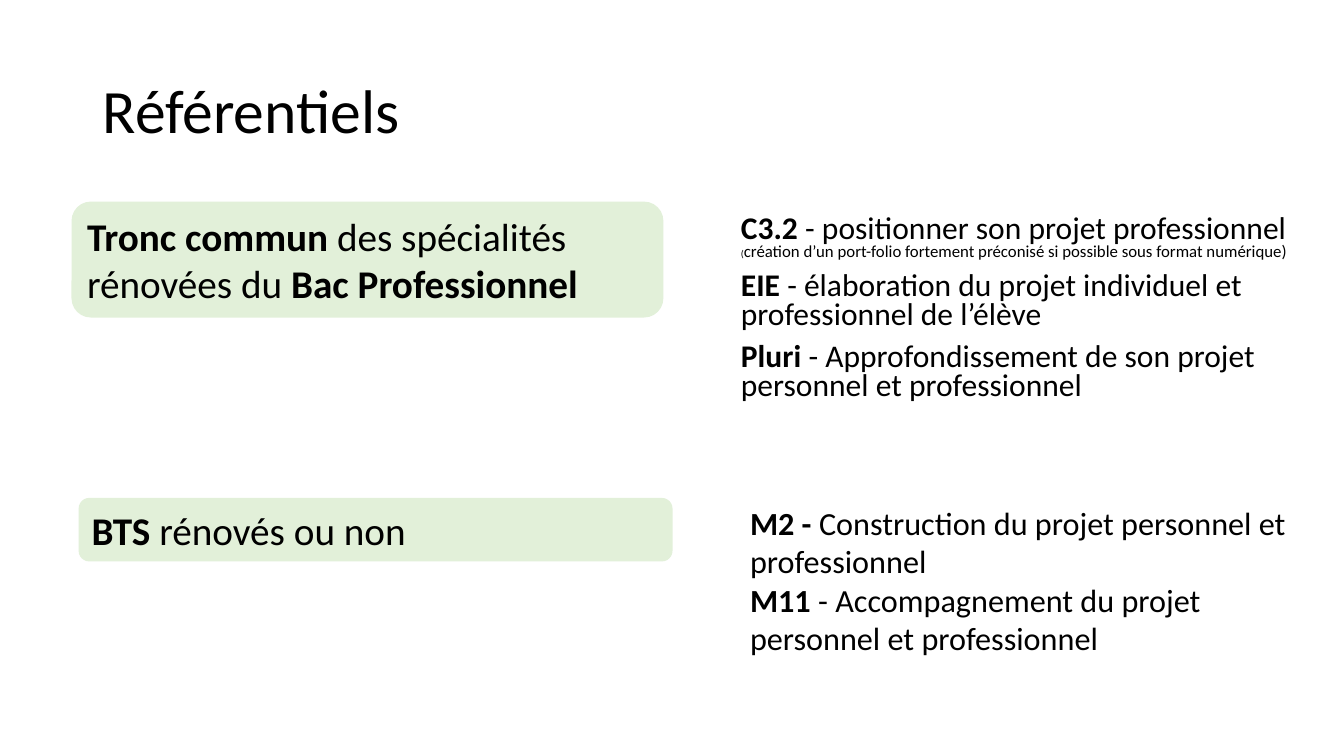
from dataclasses import dataclass

from pptx import Presentation
from pptx.dml.color import RGBColor
from pptx.enum.shapes import MSO_SHAPE
from pptx.enum.text import MSO_ANCHOR, MSO_AUTO_SIZE, PP_ALIGN
from pptx.util import Inches, Pt


@dataclass(frozen=True)
class Theme:
    font: str = "Calibri"
    ink: RGBColor = RGBColor(0x00, 0x00, 0x00)
    panel: RGBColor = RGBColor(0xE2, 0xF0, 0xD9)
    title: float = 44
    diploma: float = 28
    module: float = 23
    skill: float = 22.5
    note: float = 12
    bracket: float = 7


THEME = Theme()

# Each paragraph is a list of runs: (text, bold) or (text, bold, size).
TITLE = [[("Référentiels", False)]]
DIPLOMAS = [
    ((0.71, 2, 5.87, 1.15),
     [[("Tronc commun ", True), ("des spécialités rénovées du ", False),
       ("Bac Professionnel", True)]]),
    ((0.78, 4.94, 5.89, 0.63),
     [[("BTS ", True), ("rénovés ou non", False)]]),
]
SKILLS = [
    [("C3.2 ", True), ("- positionner son projet professionnel", False),
     (" (", False, THEME.bracket),
     ("création d’un port-folio fortement préconisé si possible sous format numérique)",
      False, THEME.note)],
    [("EIE ", True),
     ("- élaboration du projet individuel et professionnel de l’élève", False)],
    [("Pluri", True),
     (" - Approfondissement de son projet personnel et professionnel", False)],
]
MODULES = [
    [("M2 - ", True), ("Construction du projet personnel et professionnel", False)],
    [("M11 ", True), ("- Accompagnement du projet personnel et professionnel", False)],
]


def write(holder, paragraphs, *, size, line=1.0, gap=0, top=0.05,
          anchor=MSO_ANCHOR.TOP, grow=False):
    """Fill a shape with formatted runs; gap is the space between paragraphs."""
    frame = holder.text_frame
    frame.word_wrap = True
    frame.auto_size = MSO_AUTO_SIZE.SHAPE_TO_FIT_TEXT if grow else MSO_AUTO_SIZE.NONE
    frame.vertical_anchor = anchor
    frame.margin_top = Inches(top)
    for index, runs in enumerate(paragraphs):
        paragraph = frame.add_paragraph() if index else frame.paragraphs[0]
        paragraph.alignment = PP_ALIGN.LEFT
        paragraph.line_spacing = line
        paragraph.space_before = Pt(gap if index else 0)
        for text, bold, *own_size in runs:
            run = paragraph.add_run()
            run.text = text
            run.font.name = THEME.font
            run.font.bold = bold
            run.font.size = Pt(own_size[0] if own_size else size)
            run.font.color.rgb = THEME.ink


def main():
    deck = Presentation()
    deck.slide_width, deck.slide_height = Inches(13.33), Inches(7.5)
    shapes = deck.slides.add_slide(deck.slide_layouts[6]).shapes

    def text_area(*box):
        return shapes.add_textbox(*map(Inches, box))

    write(text_area(0.92, 0.4, 11.5, 1.45), TITLE, size=THEME.title,
          line=0.9, anchor=MSO_ANCHOR.MIDDLE)
    write(text_area(7.25, 1.85, 5.73, 2.4), SKILLS, size=THEME.skill,
          line=0.75, gap=10, top=0.3)
    for box, diploma in DIPLOMAS:
        panel = shapes.add_shape(MSO_SHAPE.FLOWCHART_ALTERNATE_PROCESS,
                                 *map(Inches, box))
        panel.shadow.inherit = False
        panel.fill.solid()
        panel.fill.fore_color.rgb = THEME.panel
        panel.line.fill.background()
        write(panel, diploma, size=THEME.diploma, grow=True)
    write(text_area(7.34, 4.94, 5.71, 1.63), MODULES, size=THEME.module, grow=True)

    deck.save("out.pptx")


if __name__ == "__main__":
    main()
